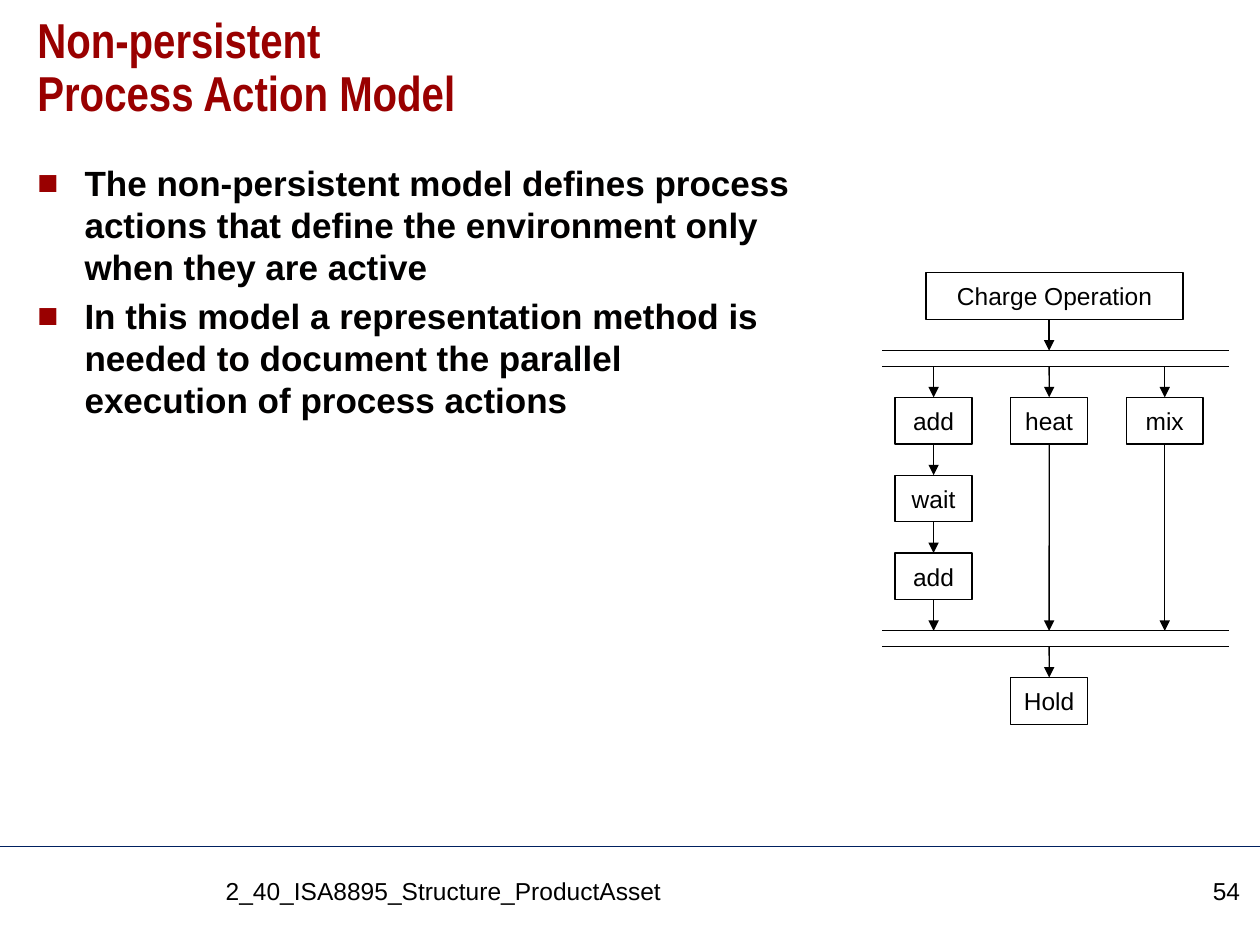
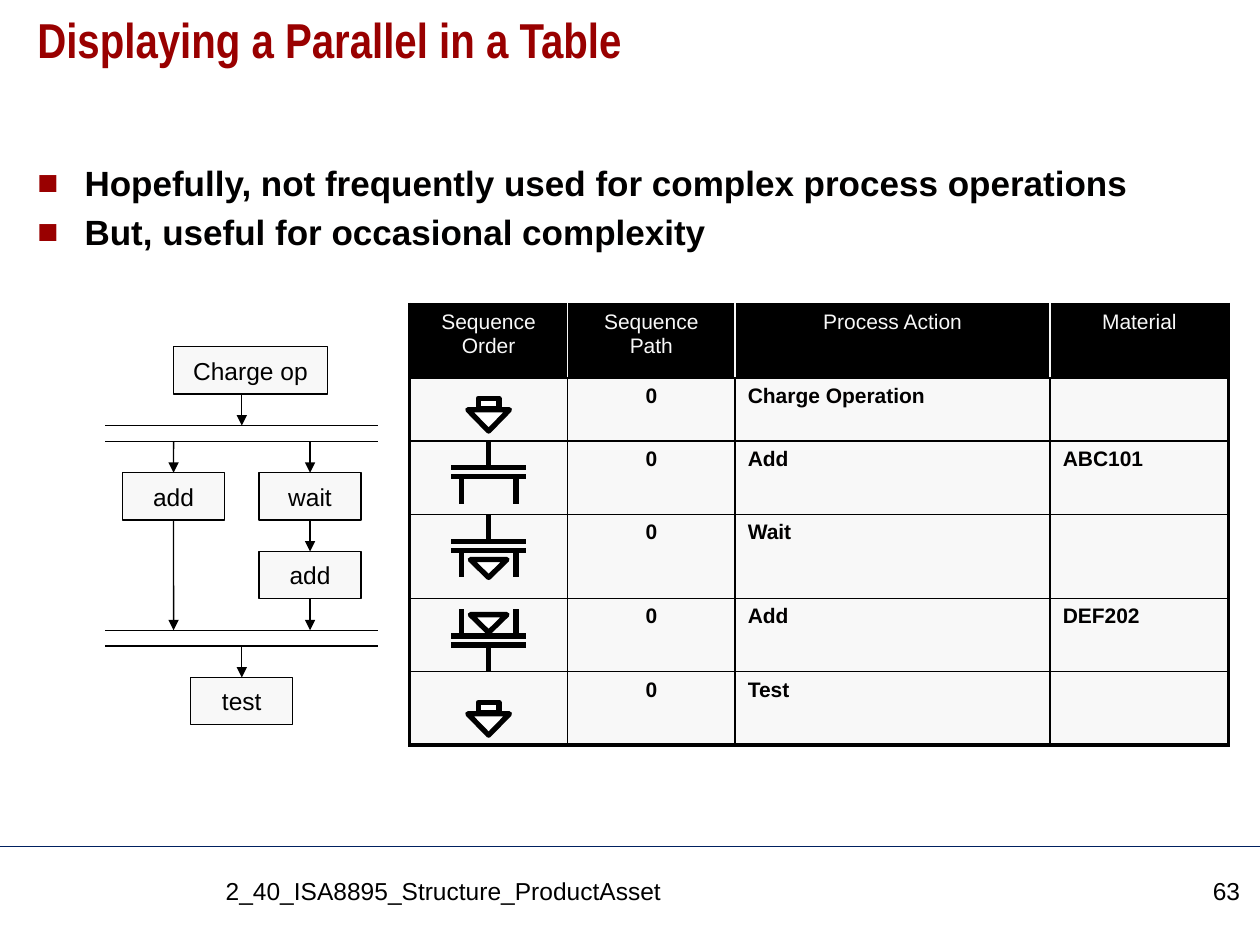
from itertools import accumulate

from lxml.etree import SubElement
from pptx import Presentation
from pptx.dml.color import RGBColor
from pptx.enum.shapes import MSO_CONNECTOR, MSO_SHAPE
from pptx.enum.text import MSO_ANCHOR, MSO_AUTO_SIZE, PP_ALIGN
from pptx.oxml.ns import qn
from pptx.util import Cm, Pt

BLACK, WHITE, PALE, RED, NAVY = "000000", "FFFFFF", "F8F8F8", "990000", "002060"
LABEL = {"name": "Arial", "size": Pt(14), "bold": False}
TITLE = {"name": "Arial Narrow", "size": Pt(28), "bold": True}
BODY = {"name": "Arial", "size": Pt(20), "bold": True}
HEADER = {"name": "Arial", "size": Pt(12), "bold": False}
CELL = {**HEADER, "bold": True}
FRAME = {"word_wrap": True, "auto_size": MSO_AUTO_SIZE.NONE,
         "vertical_anchor": MSO_ANCHOR.TOP}


def rgb(color):
    """Turn a hex string into a colour."""
    return RGBColor.from_string(color)


def apply(target, values):
    """Set each named attribute on the target."""
    for name, value in values.items():
        setattr(target, name, value)


def write(p, text, look, color=BLACK, align=PP_ALIGN.LEFT):
    """Fill a paragraph with formatted text."""
    p.text = text
    p.alignment = align
    for r in p.runs:
        apply(r.font, look)
        r.font.color.rgb = rgb(color)


def place(sp, x, y, w, h):
    """Move and size a shape in centimetres."""
    apply(sp, {"left": Cm(x), "top": Cm(y), "width": Cm(w), "height": Cm(h)})


def line(s, x1, y1, x2, y2, color=BLACK, width=0.75, arrow=False):
    """Draw a straight line, with an arrowhead at its end if asked."""
    sp = s.shapes.add_connector(MSO_CONNECTOR.STRAIGHT, Cm(x1), Cm(y1), Cm(x2), Cm(y2))
    sp.line.color.rgb = rgb(color)
    sp.line.width = Pt(width)
    if arrow:
        SubElement(sp.line._get_or_add_ln(), qn("a:tailEnd"), type="triangle")
    SubElement(sp._element.spPr, qn("a:effectLst"))
    return sp


def shape(s, kind, x, y, w, h, fill=WHITE, width=0.75):
    """Draw a filled shape with a black outline."""
    sp = s.shapes.add_shape(kind, Cm(x), Cm(y), Cm(w), Cm(h))
    sp.shadow.inherit = False
    sp.fill.solid()
    sp.fill.fore_color.rgb = rgb(fill)
    sp.line.color.rgb = rgb(BLACK)
    sp.line.width = Pt(width)
    return sp


def node(s, text, x, y, w, h, fill):
    """Draw a labelled box of a flowchart."""
    sp = shape(s, MSO_SHAPE.RECTANGLE, x, y, w, h, fill)
    apply(sp.text_frame, {"word_wrap": False, "vertical_anchor": MSO_ANCHOR.MIDDLE})
    write(sp.text_frame.paragraphs[0], text, LABEL, align=PP_ALIGN.CENTER)
    return sp


def footer_text(s, text, x, w, align):
    """Add one text of the footer."""
    tf = s.shapes.add_textbox(Cm(x), Cm(17.53), Cm(w), Cm(1.14)).text_frame
    apply(tf, FRAME)
    write(tf.paragraphs[0], text, LABEL, align=align)


def bullet(p):
    """Give a paragraph a hanging red square."""
    pPr = p._p.get_or_add_pPr()
    pPr.set("marL", str(Cm(0.95)))
    pPr.set("indent", str(-Cm(0.95)))
    SubElement(SubElement(pPr, qn("a:buClr")), qn("a:srgbClr"), val=RED)
    SubElement(pPr, qn("a:buFont"), typeface="Arial")
    SubElement(pPr, qn("a:buChar"), char="■")


def base_slide(prs, title, points, body_width, number):
    """Add a slide with title, bullet list and footer."""
    s = prs.slides.add_slide(prs.slide_layouts[1])
    place(s.shapes.title, 0.5, 0.2, 24.4, 2.1)
    tf = s.shapes.title.text_frame
    apply(tf, FRAME)
    write(tf.paragraphs[0], title, TITLE, RED)
    tf.paragraphs[0].line_spacing = 0.9

    body = s.placeholders[1]
    place(body, 0.5, 3.12, body_width, 13.6)
    tf = body.text_frame
    apply(tf, FRAME)
    for i, point in enumerate(points):
        p = tf.add_paragraph() if i else tf.paragraphs[0]
        bullet(p)
        p.space_before = Pt(4 if i else 0)
        write(p, point, BODY, "010000")

    line(s, 0, 17.07, 25.4, 17.07, NAVY)
    footer_text(s, "2_40_ISA8895_Structure_ProductAsset", 4.3, 18.3, PP_ALIGN.LEFT)
    footer_text(s, number, 22.9, 2.35, PP_ALIGN.RIGHT)
    return s


def flowchart(s, x, y, w, h, head, lanes, tail, head_x, head_w, first, pitch, node_w, fill):
    """Draw parallel lanes between a fork and a join, inside the given box."""
    rows = max(map(len, lanes))
    unit = h / (14 + 5 * rows)
    node_h, gap = 3 * unit, 2 * unit
    fork = y + node_h + gap
    lane_top = fork + unit + gap
    join = lane_top + rows * (node_h + gap)
    middle = x + first + pitch * (len(lanes) - 1) / 2

    node(s, head, x + head_x, y, head_w, node_h, fill)
    line(s, middle, y + node_h, middle, fork, arrow=True)
    for bar in (fork, fork + unit, join, join + unit):
        line(s, x, bar, x + w, bar)

    for i, names in enumerate(lanes):
        cx = x + first + i * pitch
        above = None
        for j, name in enumerate(names):
            top = lane_top + j * (node_h + gap)
            sp = node(s, name, cx - node_w / 2, top, node_w, node_h, fill)
            link = line(s, cx, top - gap, cx, top, arrow=True)
            link.end_connect(sp, 0)
            if above:
                link.begin_connect(above, 2)
            above = sp
        line(s, cx, top + node_h, cx, join, arrow=True).begin_connect(above, 2)

    end = join + unit + gap
    sp = node(s, tail, middle - node_w / 2, end, node_w, node_h, fill)
    line(s, middle, end - gap, middle, end, arrow=True).end_connect(sp, 0)


def borders(cell, sides):
    """Set cell borders from (side, colour, width) values."""
    tcPr = cell._tc.get_or_add_tcPr()
    for side, color, width in sides:
        ln = SubElement(tcPr, qn(f"a:ln{side}"), w=str(Pt(width)))
        SubElement(SubElement(ln, qn("a:solidFill")), qn("a:srgbClr"), val=color)


def action_table(s, x, y, cols, heights, rows):
    """Draw the table of process actions."""
    table = s.shapes.add_table(len(rows), len(cols), Cm(x), Cm(y),
                               Cm(sum(cols)), Cm(sum(heights))).table
    apply(table, {"first_row": False, "horz_banding": False})
    for column, width in zip(table.columns, cols):
        column.width = Cm(width)
    last_row, last_col = len(rows) - 1, len(cols) - 1
    for i, texts in enumerate(rows):
        table.rows[i].height = Cm(heights[i])
        inner = BLACK if i else PALE
        for j, text in enumerate(texts):
            cell = table.cell(i, j)
            edges = (("L", j == 0, inner), ("R", j == last_col, inner),
                     ("T", i == 0, BLACK), ("B", i == last_row, BLACK))
            borders(cell, [(side, BLACK if outer else color, 2.25 if outer else 1)
                           for side, outer, color in edges])
            cell.fill.solid()
            cell.fill.fore_color.rgb = rgb(PALE if i else BLACK)
            align = PP_ALIGN.CENTER if i == 0 or j == 1 else PP_ALIGN.LEFT
            write(cell.text_frame.paragraphs[0], text, CELL if i else HEADER,
                  "010000" if i else PALE, align)


def down_triangle(s, x, y, w, h):
    """Draw a bold triangle that points down."""
    shape(s, MSO_SHAPE.ISOSCELES_TRIANGLE, x, y, w, h, width=3).rotation = 180


def step_symbol(s, cx, y, h):
    """Draw the symbol of a single step at the foot of a cell."""
    top = y + h - 0.86
    shape(s, MSO_SHAPE.RECTANGLE, cx - 0.21, top, 0.42, 0.21, width=3)
    down_triangle(s, cx - 0.42, top + 0.23, 0.84, 0.43)


def branch_symbol(s, cx, y, h, join=False, active=False):
    """Draw a fork at the top of a cell, or a join at its foot."""
    origin, sign = (y + h, -1) if join else (y, 1)
    stem, split, tip = (origin + sign * d for d in (0.54, 0.72, 1.27))
    for bar in (stem, split):
        line(s, cx - 0.75, bar, cx + 0.75, bar, width=3)
    line(s, cx, origin, cx, stem, width=3)
    for leg in (cx - 0.55, cx + 0.55):
        line(s, leg, split, leg, tip, width=3)
    if active:
        down_triangle(s, cx - 0.37, tip + (0.12 if join else -0.36), 0.74, 0.36)


def model_slide(prs):
    """Build the slide on the non-persistent model."""
    s = base_slide(prs, "Non-persistent\vProcess Action Model", [
        "The non-persistent model defines process actions that define the "
        "environment only when they are active",
        "In this model a representation method is needed to document the "
        "parallel execution of process actions"], 15.7, "54")
    flowchart(s, 17.78, 5.5, 6.99, 9.1, "Charge Operation",
              [["add", "wait", "add"], ["heat"], ["mix"]], "Hold",
              head_x=0.89, head_w=5.18, first=1.04, pitch=2.33, node_w=1.55, fill=WHITE)


def table_slide(prs):
    """Build the slide on parallels in a table."""
    s = base_slide(prs, "Displaying a Parallel in a Table", [
        "Hopefully, not frequently used for complex process operations",
        "But, useful for occasional complexity"], 24.4, "63")
    x, y = 8.26, 6.14
    cols = [3.18, 3.38, 6.35, 3.6]
    heights = [1.48, 1.27, 1.48, 1.69, 1.48, 1.48]
    action_table(s, x, y, cols, heights, [
        ["Sequence Order", "Sequence Path", "Process Action", "Material"],
        ["", "0", "Charge Operation", ""],
        ["", "0", "Add", "ABC101"],
        ["", "0", "Wait", ""],
        ["", "0", "Add", "DEF202"],
        ["", "0", "Test", ""]])
    flowchart(s, 2.12, 6.99, 5.5, 7.62, "Charge op", [["add"], ["wait", "add"]], "test",
              head_x=1.38, head_w=3.1, first=1.38, pitch=2.75, node_w=2.06, fill=PALE)
    tops = list(accumulate(heights, initial=y))
    symbols = [(step_symbol, {}), (branch_symbol, {}), (branch_symbol, {"active": True}),
               (branch_symbol, {"join": True, "active": True}), (step_symbol, {})]
    for i, (symbol, options) in enumerate(symbols, 1):
        symbol(s, x + cols[0] / 2, tops[i], heights[i], **options)


def main():
    """Build and save the presentation."""
    prs = Presentation()
    apply(prs, {"slide_width": Cm(25.4), "slide_height": Cm(19.05)})
    model_slide(prs)
    table_slide(prs)
    prs.save("out.pptx")


if __name__ == "__main__":
    main()
